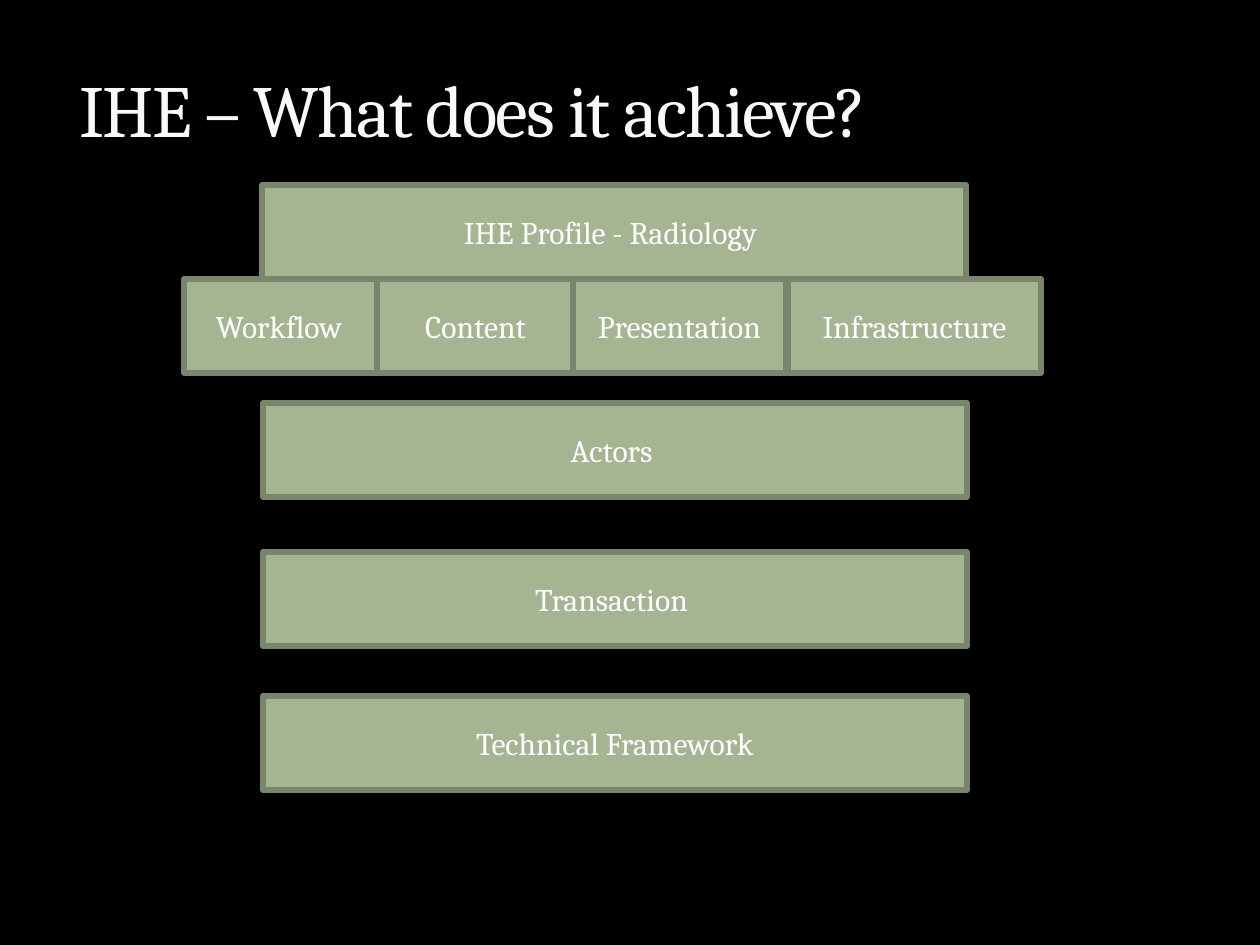
from lxml import etree
from pptx import Presentation, util as u
from pptx.dml.color import RGBColor
from pptx.enum import shapes, text
from pptx.oxml.ns import qn

PX = u.Inches(1) // 126
FONT = "Cambria"
BOX_HEIGHT = 94

# Full-width layers: label, left, top
LAYERS = [
    ("IHE Profile - Radiology ", 262, 185),
    ("Actors ", 263, 403),
    ("Transaction ", 263, 552),
    ("Technical Framework", 263, 696),
]
LAYER_WIDTH = 704

# Profile categories, side by side: label, left, width
CATEGORIES = [
    ("Workflow ", 184, 197),
    ("Content", 377, 197),
    ("Presentation", 573, 213),
    ("Infrastructure", 788, 253),
]
CATEGORY_TOP = 279


def px(*lengths):
    return [n * PX for n in lengths]


def color(hex_string):
    return RGBColor.from_string(hex_string)


def add_run(p, words, size, hex_color):
    r = p.add_run()
    r.text = words
    r.font.name = FONT
    r.font.size = u.Pt(size)
    r.font.color.rgb = color(hex_color)
    return r


def outline_text(r, hex_color, points, alpha):
    """Give a run a thin, partly transparent outline."""
    ln = etree.Element(qn("a:ln"), w=str(u.Pt(points)))
    fill = etree.SubElement(ln, qn("a:solidFill"))
    clr = etree.SubElement(fill, qn("a:srgbClr"), val=hex_color)
    etree.SubElement(clr, qn("a:alpha"), val=str(alpha * 1000))
    r.font._element.insert(0, ln)


def add_title(slide, words):
    sp = slide.shapes.add_textbox(*px(67, 45, 1134, 113))
    tf = sp.text_frame
    tf.word_wrap = True
    tf.vertical_anchor = text.MSO_ANCHOR.BOTTOM
    r = add_run(tf.paragraphs[0], words, 42, "F9F9F9")
    r.font._element.set("spc", "-100")
    outline_text(r, "3C4422", 0.25, 25)


def add_box(slide, label, left, top, width):
    sp = slide.shapes.add_shape(shapes.MSO_SHAPE.RECTANGLE,
                                *px(left, top, width, BOX_HEIGHT))
    sp.shadow.inherit = False
    sp.fill.solid()
    sp.fill.fore_color.rgb = color("A5B592")
    sp.line.color.rgb = color("7A866C")
    sp.line.width = u.Pt(3)
    tf = sp.text_frame
    tf.word_wrap = True
    tf.vertical_anchor = text.MSO_ANCHOR.MIDDLE
    p = tf.paragraphs[0]
    p.alignment = text.PP_ALIGN.CENTER
    add_run(p, label, 18, "FFFFFF")


def main():
    prs = Presentation()
    prs.slide_width, prs.slide_height = px(1260, 945)
    slide = prs.slides.add_slide(prs.slide_layouts[6])
    slide.background.fill.solid()
    slide.background.fill.fore_color.rgb = color("000000")

    # Layers first, so the categories overlap the top one
    for label, left, top in LAYERS:
        add_box(slide, label, left, top, LAYER_WIDTH)
    add_title(slide, "IHE – What does it achieve?")
    for label, left, width in CATEGORIES:
        add_box(slide, label, left, CATEGORY_TOP, width)

    prs.save("out.pptx")


if __name__ == "__main__":
    main()
